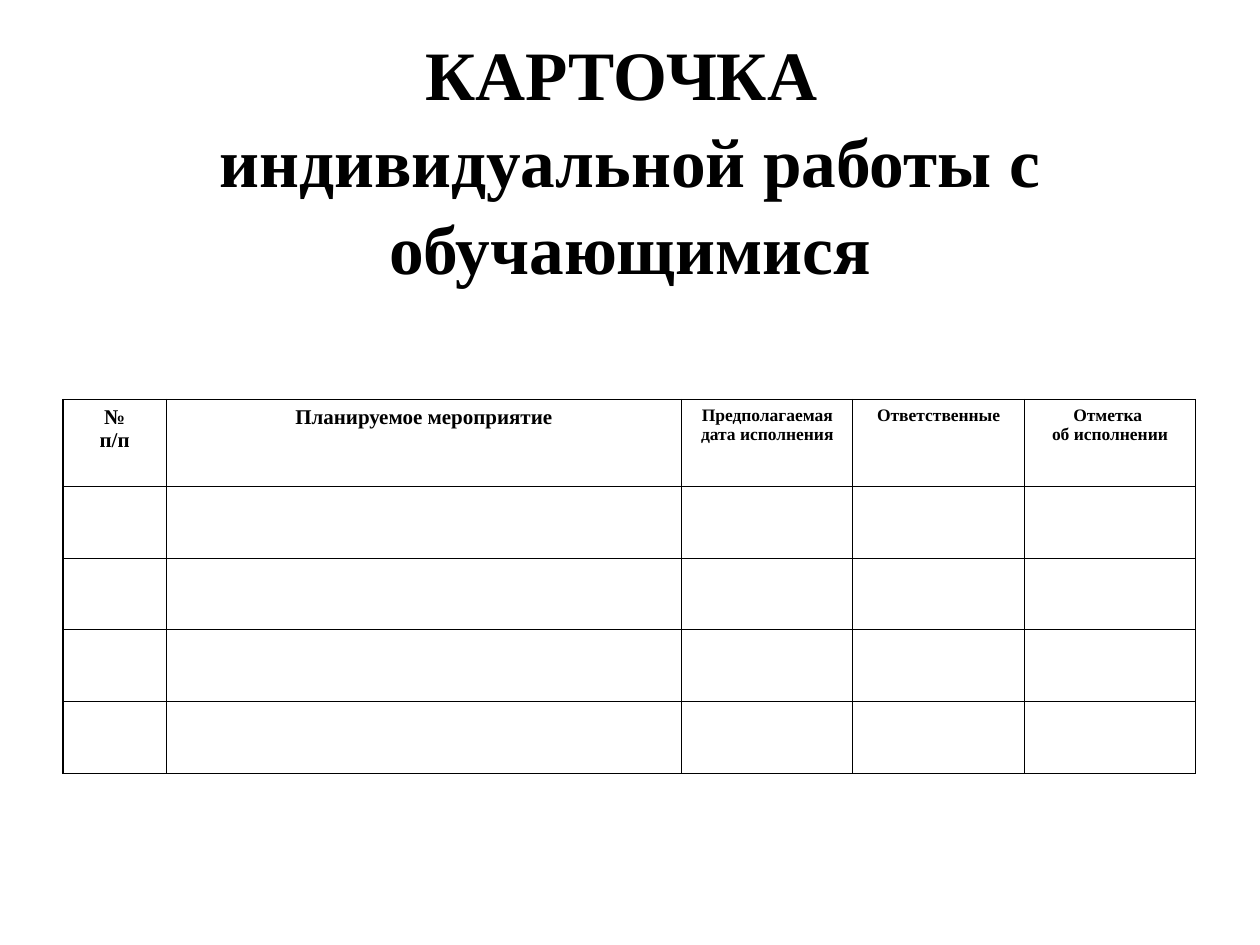
from lxml.etree import SubElement
from pptx import Presentation
from pptx.dml.color import RGBColor
from pptx.enum.text import MSO_ANCHOR, MSO_AUTO_SIZE, PP_ALIGN
from pptx.oxml.ns import qn
from pptx.util import Inches, Pt

INK = "000000"
PAPER = "FFFFFF"
FONT = "Times New Roman"
LEFT, WIDE = 0.5, 9
COLS = [0.82, 4.09] + [1.36] * 3
ROWS = [0.69] + [0.57] * 4
HEADS = [
    ("№\nп/п", 12),
    ("Планируемое мероприятие", 12),
    ("Предполагаемая\nдата исполнения", 10),
    ("Ответственные", 10),
    ("Отметка \nоб исполнении", 10),
]


def color(code):
    return RGBColor.from_string(code)


def write(frame, text, size):
    """Fill a frame with centred bold text."""
    frame.text = text
    for para in frame.paragraphs:
        para.alignment = PP_ALIGN.CENTER
        for run in para.runs:
            font = run.font
            font.name, font.size, font.bold = FONT, Pt(size), True
            font.color.rgb = color(INK)


def add_title(slide):
    title = slide.shapes.title
    title.left, title.top = Inches(LEFT), Inches(0.5)
    title.width, title.height = Inches(WIDE), Inches(1.5)
    frame = title.text_frame
    write(frame, "КАРТОЧКА \vиндивидуальной работы с обучающимися", 39.6)
    frame.paragraphs[0].line_spacing = 1.05
    frame.word_wrap = True
    frame.auto_size = MSO_AUTO_SIZE.NONE
    frame.vertical_anchor = MSO_ANCHOR.MIDDLE


def rule(cell):
    """Draw a thin line on all four sides of a cell."""
    props = cell._tc.get_or_add_tcPr()
    for side in ("lnL", "lnR", "lnT", "lnB"):
        line = SubElement(props, qn(f"a:{side}"), w=str(Pt(0.75)))
        fill = SubElement(line, qn("a:solidFill"))
        SubElement(fill, qn("a:srgbClr"), val=INK)


def add_grid(slide):
    frame = slide.shapes.add_table(
        len(ROWS), len(COLS), Inches(LEFT), Inches(3.17),
        Inches(sum(COLS)), Inches(sum(ROWS)))
    table = frame.table
    table.first_row = table.horz_banding = False
    for col, width in zip(table.columns, COLS):
        col.width = Inches(width)
    for row, height in zip(table.rows, ROWS):
        row.height = Inches(height)
    for cell in table.iter_cells():
        rule(cell)
        cell.fill.solid()
        cell.fill.fore_color.rgb = color(PAPER)
    for cell, (text, size) in zip(table.rows[0].cells, HEADS):
        write(cell.text_frame, text, size)


def main():
    deck = Presentation()
    deck.slide_width, deck.slide_height = Inches(10), Inches(7.5)
    slide = deck.slides.add_slide(deck.slide_layouts[5])
    add_title(slide)
    add_grid(slide)
    deck.save("out.pptx")


if __name__ == "__main__":
    main()
